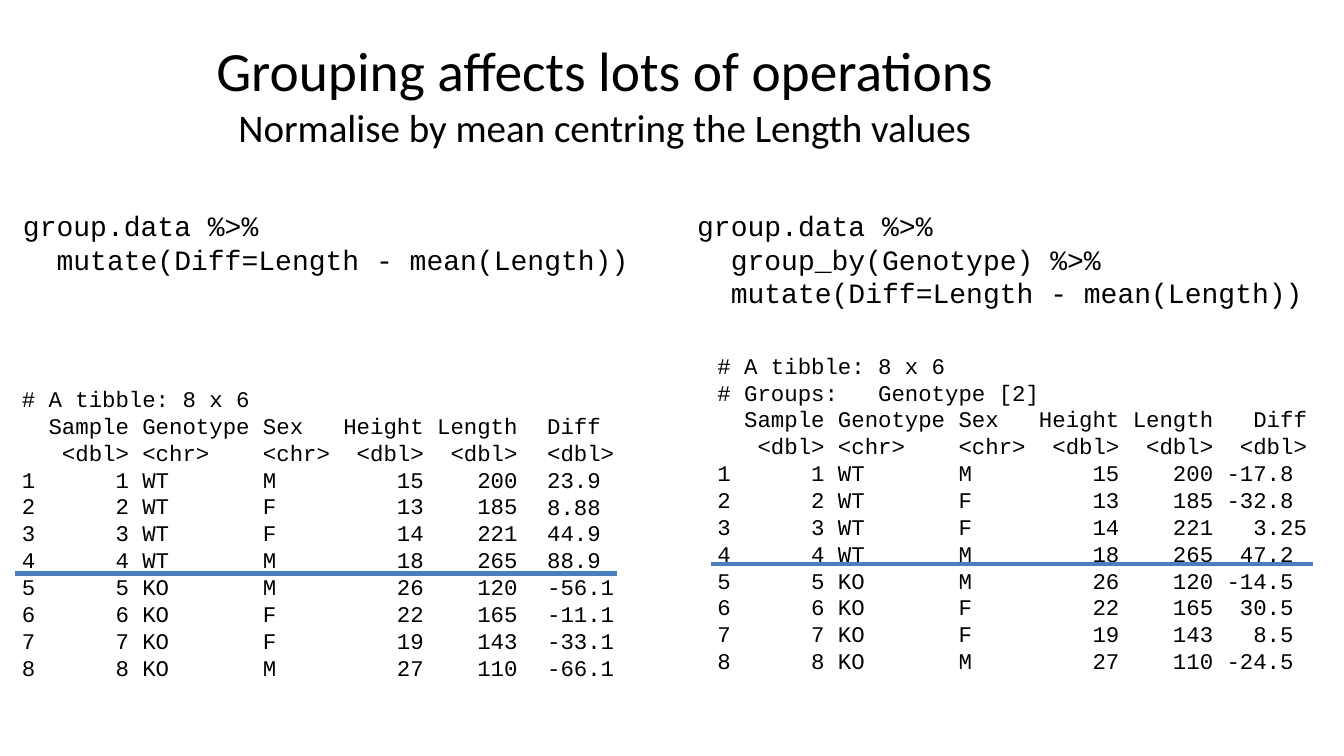
from lxml import etree
from pptx import Presentation, util as u
from pptx.dml.color import RGBColor
from pptx.enum import shapes, text
from pptx.oxml import ns

BLACK = RGBColor(0x00, 0x00, 0x00)
BLUE = RGBColor(0x4B, 0x7E, 0xBC)

ROW = "{:1} {:>6} {:8} {:5} {:>6} {:>6}"
HEADERS = [
    ("", "Sample", "Genotype", "Sex", "Height", "Length"),
    ("", "<dbl>", "<chr>", "<chr>", "<dbl>", "<dbl>"),
]
SAMPLES = [
    ("WT", "M", 15, 200),
    ("WT", "F", 13, 185),
    ("WT", "F", 14, 221),
    ("WT", "M", 18, 265),
    ("KO", "M", 26, 120),
    ("KO", "F", 22, 165),
    ("KO", "F", 19, 143),
    ("KO", "M", 27, 110),
]
DIFF_HEADERS = ["Diff", "<dbl>"]
OVERALL_DIFFS = ["23.9", "8.88", "44.9", "88.9", "-56.1", "-11.1", "-33.1", "-66.1"]
GROUPED_DIFFS = ["-17.8", "-32.8", "3.25", "47.2", "-14.5", "30.5", "8.5", "-24.5"]

SOURCE = "group.data %>%"
GROUP_BY = "  group_by(Genotype) %>%"
MUTATE = "  mutate(Diff=Length - mean(Length))"
SIZE_LINE = "# A tibble: 8 x 6"


def align_point(value):
    """Pad a number so that its decimal point falls in a fixed column."""
    whole, point, decimals = value.partition(".")
    return whole.rjust(3) + point + decimals


class CodeSlide:
    title_font = "Calibri"
    code_font = "Courier New"
    code_size = 20
    output_size = 16

    def __init__(self, deck):
        self.page = deck.slides.add_slide(deck.slide_layouts[5])

    def style(self, span, font, size):
        span.font.name = font
        span.font.size = u.Pt(size)
        span.font.color.rgb = BLACK

    def title(self, heading, subtitle, left, top, width, height):
        box = self.page.shapes.title
        box.left, box.top = u.Cm(left), u.Cm(top)
        box.width, box.height = u.Cm(width), u.Cm(height)
        frame = box.text_frame
        frame.auto_size = text.MSO_AUTO_SIZE.NONE
        frame.vertical_anchor = text.MSO_ANCHOR.MIDDLE
        para = frame.paragraphs[0]
        para.text = f"{heading}\v{subtitle}"
        para.alignment = text.PP_ALIGN.CENTER
        for span, size in zip(para.runs, (39.6, 27.9)):
            self.style(span, self.title_font, size)

    def code(self, lines, left, top, width, height, size=code_size):
        box = self.page.shapes.add_textbox(
            u.Cm(left), u.Cm(top), u.Cm(width), u.Cm(height))
        frame = box.text_frame
        frame.word_wrap = True
        frame.auto_size = text.MSO_AUTO_SIZE.SHAPE_TO_FIT_TEXT
        frame.text = "\n".join(lines)
        for para in frame.paragraphs:
            for span in para.runs:
                self.style(span, self.code_font, size)

    def output(self, lines, left, top, width, height):
        self.code(lines, left, top, width, height, self.output_size)

    def divider(self, left, top, width):
        line = self.page.shapes.add_connector(
            shapes.MSO_CONNECTOR.STRAIGHT,
            u.Cm(left), u.Cm(top), u.Cm(left + width), u.Cm(top))
        line.line.color.rgb = BLUE
        line.line.width = u.Pt(3)
        properties = line._element.find(ns.qn("p:spPr"))
        etree.SubElement(properties, ns.qn("a:effectLst"))


def main():
    deck = Presentation()
    deck.slide_width, deck.slide_height = u.Cm(33.87), u.Cm(19.05)
    slide = CodeSlide(deck)
    slide.title("Grouping affects lots of operations",
                "Normalise by mean centring the Length values",
                0, 0.76, 30.48, 3.18)

    table = [ROW.format(*header) for header in HEADERS]
    table += [ROW.format(number, number, *sample)
              for number, sample in enumerate(SAMPLES, 1)]
    grouped_column = [header.rjust(6) for header in DIFF_HEADERS]
    grouped_column += [align_point(value) for value in GROUPED_DIFFS]
    grouped_table = [f"{row} {diff}" for row, diff in zip(table, grouped_column)]

    slide.code([SOURCE, MUTATE], 0.33, 5.13, 15.8, 1.96)
    slide.output([SIZE_LINE, "# Groups:   Genotype [2]", *grouped_table],
                 17.83, 8.74, 16.28, 8.64)
    slide.code([SOURCE, GROUP_BY, MUTATE], 17.32, 5.13, 16.79, 2.82)
    slide.output([SIZE_LINE, *table], 0.3, 9.58, 13.23, 7.77)
    slide.divider(0.38, 14.45, 15.16)
    slide.output(DIFF_HEADERS + OVERALL_DIFFS, 13.54, 10.26, 2.59, 7.09)
    slide.divider(17.93, 14.22, 15.16)
    deck.save("out.pptx")


if __name__ == "__main__":
    main()
